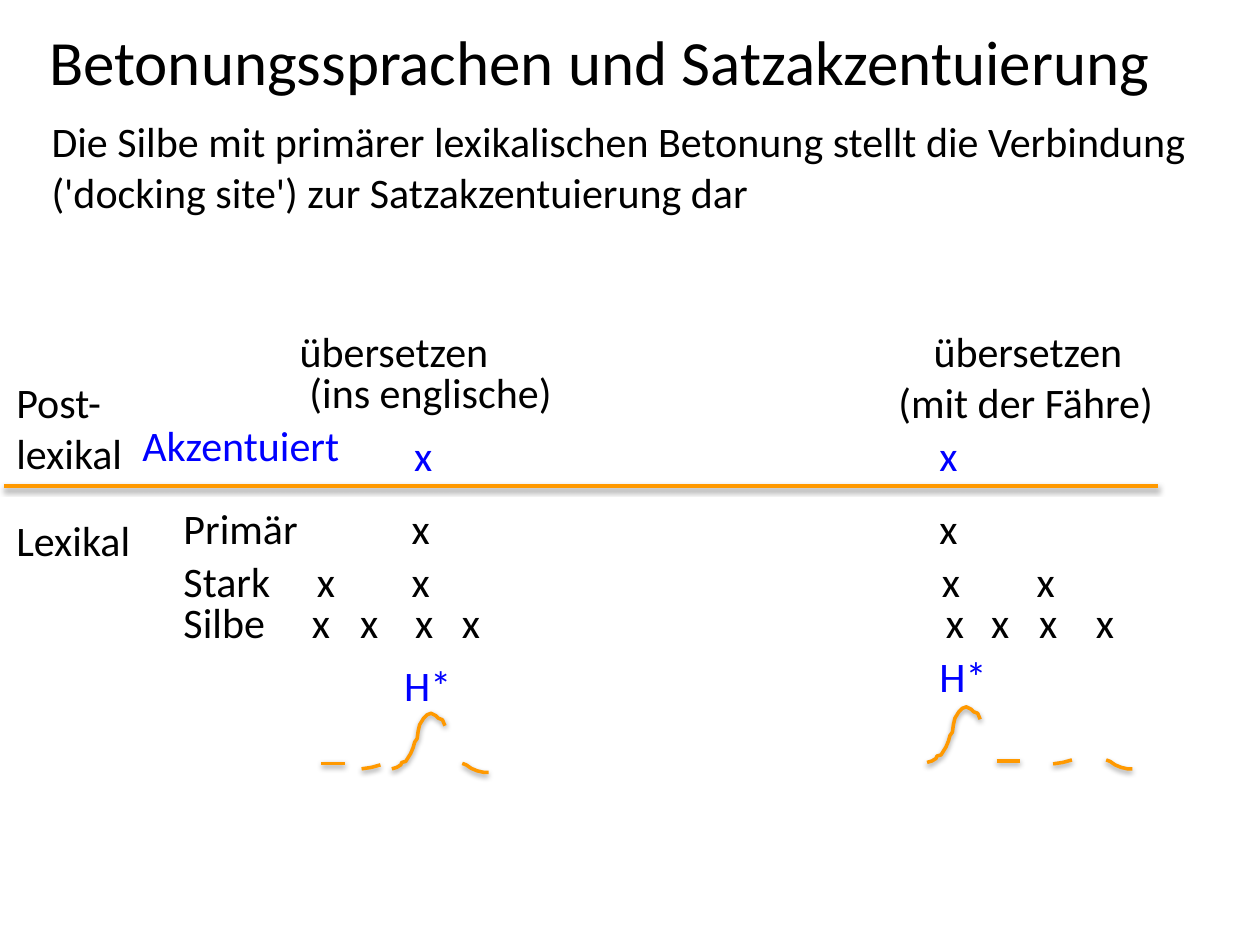
from lxml import etree
from pptx import Presentation
from pptx.dml.color import RGBColor
from pptx.enum.shapes import MSO_CONNECTOR
from pptx.enum.text import MSO_AUTO_SIZE
from pptx.oxml import parse_xml
from pptx.oxml.ns import qn
from pptx.util import Cm, Pt

STRAIGHT = MSO_CONNECTOR.STRAIGHT
GROW = MSO_AUTO_SIZE.SHAPE_TO_FIT_TEXT

THEME = {
    "font": "Calibri", "title": 36, "body": 24, "line": 2,
    "text": RGBColor(0, 0, 0),
    "accent": RGBColor(0, 0, 255),
    "contour": RGBColor(255, 153, 0),
}
SHADOW = (
    '<a:effectLst xmlns:a="http://schemas.openxmlformats.org/drawingml/2006/main">'
    '<a:outerShdw blurRad="40000" dist="20000" dir="5400000" rotWithShape="0">'
    '<a:srgbClr val="000000"><a:alpha val="38000"/></a:srgbClr>'
    '</a:outerShdw></a:effectLst>'
)

# Content: all lengths in cm
TITLE = ("Betonungssprachen und Satzakzentuierung", (0.74, 0.33, 22.89, 1.8))
LABELS = [
    ("Die Silbe mit primärer lexikalischen Betonung stellt die Verbindung "
     "('docking site') zur Satzakzentuierung dar", (0.79, 2.21, 23.57, 2.31)),
    ("Lexikal", (0.08, 10.24, 2.97, 1.3)),
    ("Post-lexikal", (0.08, 7.47, 3.18, 2.34)),
    ("(ins englische)", (5.99, 7.26, 5.72, 1.3)),
    ("(mit der Fähre)", (17.86, 7.47, 5.72, 1.3)),
]
ACCENTS = [
    ("Akzentuiert", (2.62, 8.33, 4.65, 1.27)),
    ("x", (8.1, 8.53, 1.27, 1.3)),
    ("H*", (7.9, 13.18, 1.47, 1.3)),
    ("x", (18.69, 8.53, 1.27, 1.3)),
    ("H*", (18.69, 12.98, 1.47, 1.3)),
]
# Metrical grid: first word, repeated mark, box, tab stops of the marks
GRID = [
    ("übersetzen", "übersetzen", (5.79, 6.43, 17.58, 1.3), [12.78]),
    ("Primär", "x", (3.45, 10.01, 21.95, 1.27), [4.6, 15.24]),
    ("Stark", "x", (3.45, 11.07, 21.95, 1.27), [2.69, 4.6, 15.29, 17.2]),
    ("Silbe", "x", (3.45, 11.91, 21.95, 1.27),
     [2.59, 3.56, 4.67, 5.61, 15.37, 16.28, 17.25, 18.39]),
]
DIVIDER = [(0.08, 9.8), (23.34, 9.8)]

# Pitch pieces, each relative to its own top left corner
PIECES = {
    "flat": [(0, 0), (0.48, 0)],
    "rise": [(0, 0.08), (0.2, 0.05), (0.38, 0)],
    "fall": [(0, 0), (0.08, 0.03), (0.18, 0.1), (0.3, 0.15), (0.43, 0.18),
             (0.53, 0.18)],
    "peak": [(0, 1.12), (0.1, 1.09), (0.18, 1.04), (0.2, 0.99), (0.28, 0.97),
             (0.38, 0.81), (0.43, 0.69), (0.46, 0.58), (0.51, 0.51),
             (0.53, 0.36), (0.56, 0.23), (0.64, 0.1), (0.71, 0.03), (0.79, 0),
             (0.89, 0.05), (0.94, 0.1), (1.02, 0.13), (1.07, 0.25)],
}
CONTOURS = [
    [("flat", 6.48, 15.39), ("rise", 7.29, 15.42),
     ("peak", 7.9, 14.38), ("fall", 9.32, 15.39)],
    [("peak", 18.69, 14.25), ("flat", 20.09, 15.34),
     ("rise", 21.23, 15.32), ("fall", 22.3, 15.32)],
]


def add_text(slide, text, box, size="body", color="text", wrap=True, tabs=()):
    tf = slide.shapes.add_textbox(*map(Cm, box)).text_frame
    for name, value in {"word_wrap": wrap, "auto_size": GROW}.items():
        setattr(tf, name, value)
    p = tf.paragraphs[0]
    if tabs:
        stops = etree.SubElement(p._p.get_or_add_pPr(), qn("a:tabLst"))
        for pos in tabs:
            etree.SubElement(stops, qn("a:tab"), pos=str(Cm(pos)), algn="l")
    r = p.add_run()
    r.text = text
    for name, value in {"name": THEME["font"], "size": Pt(THEME[size])}.items():
        setattr(r.font, name, value)
    r.font.color.rgb = THEME[color]


def add_stroke(slide, points):
    pts = [(Cm(x), Cm(y)) for x, y in points]
    if len(pts) == 2:
        s = slide.shapes.add_connector(STRAIGHT, *pts[0], *pts[1])
    else:
        builder = slide.shapes.build_freeform(*pts[0])
        builder.add_line_segments(pts[1:], close=False)
        s = builder.convert_to_shape()
        s.fill.background()
    s.line.color.rgb = THEME["contour"]
    s.line.width = Pt(THEME["line"])
    s._element.spPr.append(parse_xml(SHADOW))


def main():
    prs = Presentation()
    prs.slide_width, prs.slide_height = Cm(25.4), Cm(19.05)
    slide = prs.slides.add_slide(prs.slide_layouts[6])

    # Title, labels and the line between the two levels
    add_text(slide, *TITLE, size="title", wrap=False)
    add_stroke(slide, DIVIDER)
    for text, box in LABELS:
        add_text(slide, text, box)

    # Metrical grid
    for head, mark, box, tabs in GRID:
        add_text(slide, "\t".join([head] + [mark] * len(tabs)), box, tabs=tabs)

    # Sentence accents
    for text, box in ACCENTS:
        add_text(slide, text, box, color="accent")

    # Pitch contours
    for contour in CONTOURS:
        for piece, left, top in contour:
            add_stroke(slide, [(left + x, top + y) for x, y in PIECES[piece]])

    prs.save("out.pptx")


if __name__ == "__main__":
    main()
